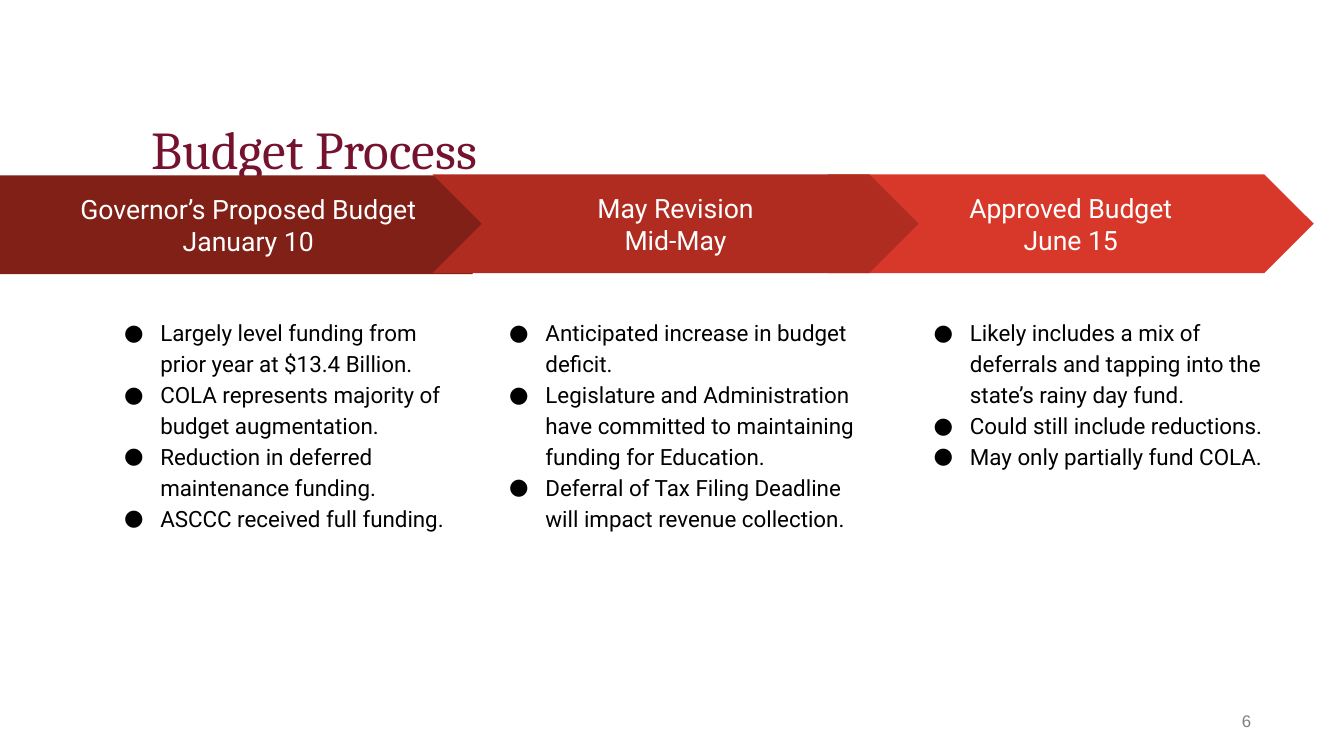
from dataclasses import dataclass

from lxml.etree import SubElement
from pptx import Presentation
from pptx.dml.color import RGBColor
from pptx.enum.shapes import MSO_SHAPE
from pptx.enum.text import MSO_ANCHOR, MSO_AUTO_SIZE, PP_ALIGN
from pptx.oxml.ns import qn
from pptx.util import Inches, Pt


@dataclass(frozen=True)
class Theme:
    wine: str = "75122E"
    dark: str = "802017"
    mid: str = "B02C20"
    light: str = "D83829"
    white: str = "FFFFFF"
    black: str = "000000"
    gray: str = "7F7F7F"
    serif: str = "Cambria"
    sans: str = "Roboto"
    plain: str = "Arial"
    title: int = 38
    label: int = 19
    body: int = 16
    small: int = 12


theme = Theme()


def place(shape, left, top, width, height):
    shape.left, shape.top = Inches(left), Inches(top)
    shape.width, shape.height = Inches(width), Inches(height)


def write(shape, lines, size, font, color, align=PP_ALIGN.LEFT, space=1.0,
          anchor=MSO_ANCHOR.MIDDLE, pads=(0.13, 0.13, 0.13, 0.13), bullet=None):
    """Fill a shape with one paragraph per line; pads run left, top, right, bottom."""
    frame = shape.text_frame
    frame.word_wrap = True
    frame.auto_size = MSO_AUTO_SIZE.NONE
    frame.vertical_anchor = anchor
    (frame.margin_left, frame.margin_top,
     frame.margin_right, frame.margin_bottom) = map(Inches, pads)
    for num, line in enumerate(lines):
        para = frame.add_paragraph() if num else frame.paragraphs[0]
        if bullet:
            props = para._p.get_or_add_pPr()
            props.set("marL", str(Inches(0.5)))
            props.set("indent", str(Inches(-0.36)))
            tint = SubElement(props, qn("a:buClr"))
            SubElement(tint, qn("a:srgbClr"), val=color)
            SubElement(props, qn("a:buFont"), typeface=font)
            SubElement(props, qn("a:buChar"), char=bullet)
        para.alignment = align
        para.line_spacing = space
        para.space_before = para.space_after = Pt(0)
        run = para.add_run()
        run.text = line
        run.font.size = Pt(size)
        run.font.name = font
        run.font.bold = False
        run.font.color.rgb = RGBColor.from_string(color)


deck = Presentation()
deck.slide_width, deck.slide_height = Inches(13.33), Inches(7.5)
slide = deck.slides.add_slide(deck.slide_layouts.get_by_name("Comparison"))
shapes = slide.shapes

# Title
title = shapes.title
place(title, 1.4, 0.4, 10.99, 1.45)
write(title, ["Budget Process"], theme.title, theme.serif, theme.wine, space=0.9,
      anchor=MSO_ANCHOR.BOTTOM, pads=(0.1, 0.05, 0.1, 0.05))

# Stages: arrow kind, fill, arrow box, label lines, list left and width, list items.
# The middle arrow comes last because it overlaps both neighbours.
stages = [
    (MSO_SHAPE.CHEVRON, theme.light, (8.21, 1.73, 4.82, 0.98),
     ["Approved Budget", "June 15"], 8.99, 3.79,
     ["Likely includes a mix of deferrals and tapping into the state’s rainy day fund.",
      "Could still include reductions.",
      "May only partially fund COLA."]),
    (MSO_SHAPE.PENTAGON, theme.dark, (0, 1.74, 5.17, 0.98),
     ["Governor’s Proposed Budget", "January 10"], 0.96, 3.66,
     ["Largely level funding from prior year at $13.4 Billion.",
      "COLA represents majority of budget augmentation.",
      "Reduction in deferred maintenance funding.",
      "ASCCC received full funding."]),
    (MSO_SHAPE.CHEVRON, theme.mid, (4.29, 1.73, 4.82, 0.98),
     ["May Revision", "Mid-May"], 4.78, 3.9,
     ["Anticipated increase in budget deficit.",
      "Legislature and Administration have committed to maintaining funding for Education.",
      "Deferral of Tax Filing Deadline will impact revenue collection."]),
]
bodies = [holder for holder in slide.placeholders if holder.placeholder_format.idx > 0]
for body, (kind, fill, box, label, left, width, items) in zip(bodies, stages):
    arrow = shapes.add_shape(kind, *map(Inches, box))
    arrow.adjustments[0] = 0.5
    arrow.shadow.inherit = False
    arrow.fill.solid()
    arrow.fill.fore_color.rgb = RGBColor.from_string(fill)
    arrow.line.fill.background()
    write(arrow, label, theme.label, theme.sans, theme.white, align=PP_ALIGN.CENTER)

    place(body, left, 3, width, 3.81)
    write(body, items, theme.body, theme.sans, theme.black, space=1.15,
          anchor=MSO_ANCHOR.TOP, bullet="●")

for spare in bodies[len(stages):]:
    spare.element.getparent().remove(spare.element)

# Page number
page = shapes.add_textbox(Inches(11.41), Inches(6.95), Inches(1), Inches(0.4))
write(page, ["6"], theme.small, theme.plain, theme.gray, align=PP_ALIGN.RIGHT,
      pads=(0.1, 0.05, 0, 0.05))

deck.save("out.pptx")
